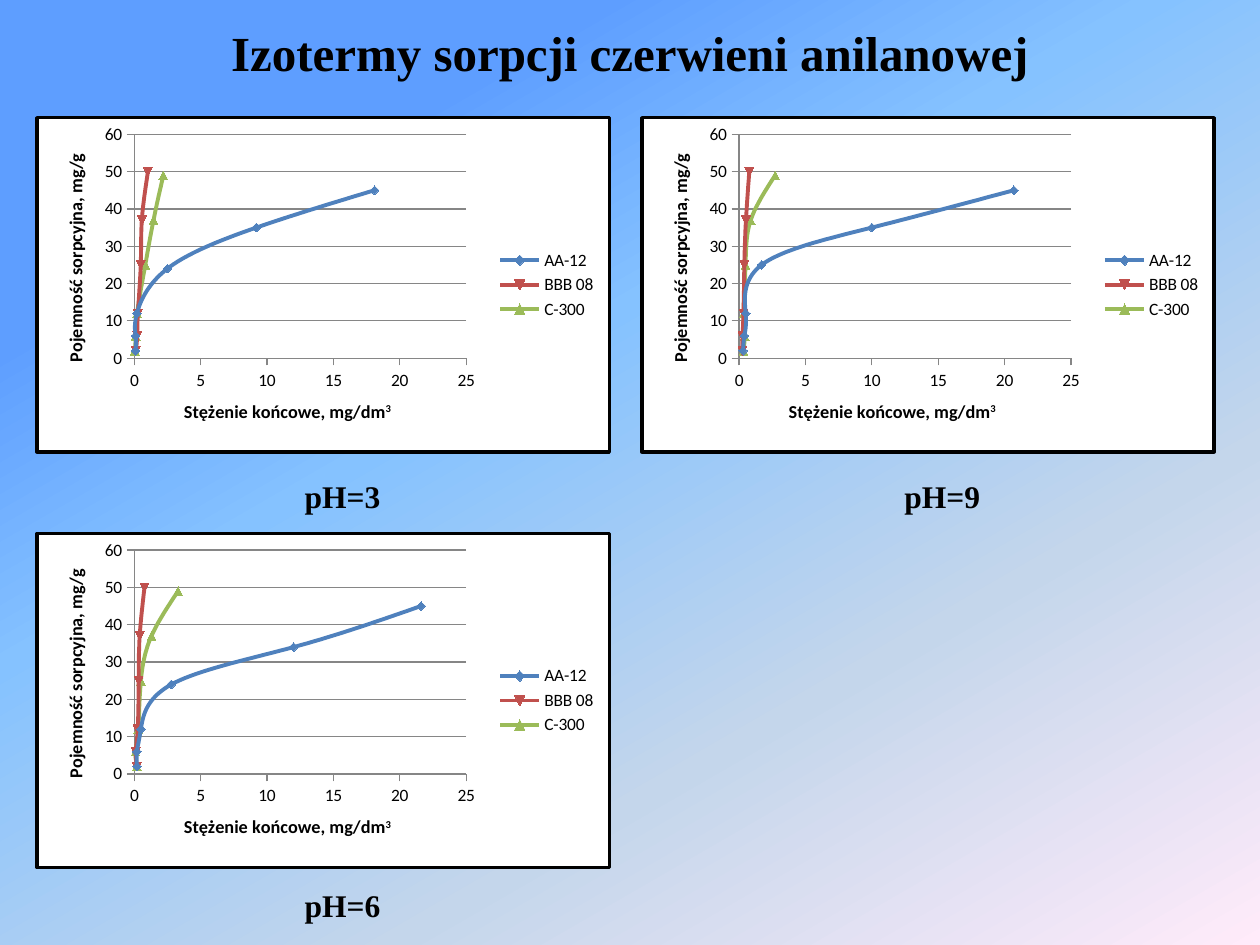
"""Build a slide of three aniline red sorption isotherm charts."""
from dataclasses import dataclass

from lxml import etree
from pptx import Presentation
from pptx import util as u
from pptx.chart.data import XyChartData
from pptx.dml.color import RGBColor
from pptx.enum import chart as charts, text
from pptx.oxml import parse_xml
from pptx.oxml.ns import nsdecls, qn


@dataclass(frozen=True)
class Theme:
    """Colours, fonts and type sizes."""
    ink: str = "000000"
    paper: str = "FFFFFF"
    rule: str = "868686"
    series: tuple = ("4F81BD", "C0504D", "9BBB59")
    backdrop: tuple = ((21, "5E9EFF"), (40, "85C2FF"), (70, "C4D6EB"), (100, "FFEBFA"))
    backdrop_angle: int = 60
    text_font: str = "Times New Roman"
    chart_font: str = "Calibri"
    title_size: float = 28
    label_size: float = 18
    axis_title_size: float = 10.5
    chart_size: float = 10
    frame_width: float = 2
    curve_width: float = 2.25
    marker_size: int = 5


class Board:
    """Hold the theme and the current slide on a grid of 100 columns and 75 rows."""

    def __init__(self, deck, theme):
        """Add a title-only page to the deck."""
        self.theme = theme
        self.column = deck.slide_width / 100
        self.row = deck.slide_height / 75
        self.page = deck.slides.add_slide(deck.slide_layouts[5])

    def area(self, left, top, width, height):
        """Turn columns and rows into slide lengths."""
        return (u.Emu(round(left * self.column)), u.Emu(round(top * self.row)),
                u.Emu(round(width * self.column)), u.Emu(round(height * self.row)))

    def style(self, font, name, size, bold=False):
        """Apply the ink colour and the given type."""
        font.name, font.size, font.bold = name, u.Pt(size), bold
        font.color.rgb = RGBColor.from_string(self.theme.ink)

    def line(self, line_format, color, width):
        """Set a solid line."""
        line_format.color.rgb = RGBColor.from_string(color)
        line_format.width = u.Pt(width)

    def backdrop(self):
        """Fill the page background with the theme gradient."""
        fill = self.page.background.fill
        fill.gradient()
        fill.gradient_angle = 360 - self.theme.backdrop_angle
        stops = next(self.page.element.iter(qn("a:gsLst")))
        for stop in list(stops):
            stops.remove(stop)
        for share, color in self.theme.backdrop:
            stop = etree.SubElement(stops, qn("a:gs"), pos=str(share * 1000))
            etree.SubElement(stop, qn("a:srgbClr"), val=color)

    def title(self, words, *place):
        """Move and fill the title placeholder."""
        box = self.page.shapes.title
        box.left, box.top, box.width, box.height = self.area(*place)
        frame = box.text_frame
        frame.text = words
        frame.vertical_anchor = text.MSO_ANCHOR.TOP
        para = frame.paragraphs[0]
        para.alignment = text.PP_ALIGN.CENTER
        para.space_before = u.Pt(self.theme.title_size * 0.2)
        self.style(para.runs[0].font, self.theme.text_font, self.theme.title_size, True)

    def label(self, words, *place):
        """Add a one-line caption."""
        frame = self.page.shapes.add_textbox(*self.area(*place)).text_frame
        frame.word_wrap = False
        frame.auto_size = text.MSO_AUTO_SIZE.SHAPE_TO_FIT_TEXT
        frame.text = words
        span = frame.paragraphs[0].runs[0]
        self.style(span.font, self.theme.text_font, self.theme.label_size, True)

    def layout(self, **shares):
        """Make a manual chart layout from shares of the chart."""
        element = parse_xml(f"<c:layout {nsdecls('c')}><c:manualLayout/></c:layout>")
        manual = element[0]
        if "w" in shares:
            etree.SubElement(manual, qn("c:layoutTarget"), val="inner")
        for side in "xy":
            etree.SubElement(manual, qn(f"c:{side}Mode"), val="edge")
        for side, share in shares.items():
            etree.SubElement(manual, qn(f"c:{side}"), val=str(share))
        return element

    def axis(self, axis, words, maximum, step, left, top, raised=""):
        """Scale and style an axis and place its title."""
        axis.minimum_scale, axis.maximum_scale, axis.major_unit = 0, maximum, step
        axis.major_tick_mark = charts.XL_TICK_MARK.OUTSIDE
        axis.tick_labels.number_format = "0"
        axis.tick_labels.number_format_is_linked = False
        self.line(axis.format.line, self.theme.rule, 0.75)
        title = axis.axis_title
        para = title.text_frame.paragraphs[0]
        for piece in filter(None, (words, raised)):
            span = para.add_run()
            span.text = piece
            self.style(span.font, self.theme.chart_font, self.theme.axis_title_size, True)
        if raised:
            list(title.element.iter(qn("a:rPr")))[-1].set("baseline", "30000")
        for old in title.element.findall(qn("c:layout")):
            title.element.remove(old)
        title.element.find(qn("c:tx")).addnext(self.layout(x=left, y=top))

    def frame(self, chart):
        """Give the chart a filled and outlined frame."""
        theme = self.theme
        chart.element.find(qn("c:chart")).addnext(parse_xml(
            f"<c:spPr {nsdecls('c', 'a')}>"
            f'<a:solidFill><a:srgbClr val="{theme.paper}"/></a:solidFill>'
            f'<a:ln w="{u.Pt(theme.frame_width)}"><a:solidFill>'
            f'<a:srgbClr val="{theme.ink}"/></a:solidFill></a:ln></c:spPr>'))

    def isotherms(self, curves, *place):
        """Add a smooth scatter chart of sorption isotherms."""
        theme = self.theme
        data = XyChartData()
        for name, (concentrations, capacities) in curves.items():
            series = data.add_series(name)
            for point in zip(concentrations, capacities):
                series.add_data_point(*point)
        chart = self.page.shapes.add_chart(
            charts.XL_CHART_TYPE.XY_SCATTER_SMOOTH, *self.area(*place), data).chart
        self.style(chart.font, theme.chart_font, theme.chart_size)
        chart.has_title = False
        chart.has_legend = True
        chart.legend.position = charts.XL_LEGEND_POSITION.RIGHT
        chart.legend.include_in_layout = False
        self.axis(chart.category_axis, "Stężenie końcowe, mg/dm", 25, 5, 0.25, 0.83, "3")
        self.axis(chart.value_axis, "Pojemność sorpcyjna, mg/g", 60, 10, 0.04, 0.1)
        chart.category_axis.has_major_gridlines = False
        chart.value_axis.has_major_gridlines = True
        self.line(chart.value_axis.major_gridlines.format.line, theme.rule, 0.75)
        plot = chart.plots[0]
        plot.vary_by_categories = False
        for series, color in zip(plot.series, theme.series):
            self.line(series.format.line, color, theme.curve_width)
            series.marker.style = charts.XL_MARKER_STYLE.AUTOMATIC
            series.marker.size = theme.marker_size
            series.marker.format.fill.solid()
            series.marker.format.fill.fore_color.rgb = RGBColor.from_string(color)
            self.line(series.marker.format.line, color, 0.75)
        for number, series in enumerate(chart.element.iter(qn("c:ser")), 1):
            series.find(qn("c:idx")).set("val", str(number))
            series.find(qn("c:smooth")).set("val", "1")
        area = next(chart.element.iter(qn("c:plotArea")))
        for old in area.findall(qn("c:layout")):
            area.remove(old)
        area.insert(0, self.layout(x=0.17, y=0.05, w=0.58, h=0.67))
        self.frame(chart)


SORBENTS = ("AA-12", "BBB 08", "C-300")
LOW_CAPACITY = (2, 6, 12, 24, 35, 45)
B_CAPACITY = (2, 6, 12, 25, 37, 50)
C_CAPACITY = (2, 6, 12, 25, 37, 49)
PANELS = (
    ("pH=3", 2.8, 9.2, 23.2, 37.4, (
        ((0.1, 0.1, 0.2, 2.5, 9.2, 18.1), LOW_CAPACITY),
        ((0.12, 0.22, 0.27, 0.49, 0.57, 1.03), B_CAPACITY),
        ((0.04, 0.11, 0.21, 0.83, 1.45, 2.19), C_CAPACITY))),
    ("pH=6", 2.8, 42.2, 23.2, 69.8, (
        ((0.2, 0.2, 0.5, 2.8, 12, 21.6), (2, 6, 12, 24, 34, 45)),
        ((0.19, 0.11, 0.26, 0.33, 0.41, 0.77), B_CAPACITY),
        ((0.2, 0.1, 0.3, 0.5, 1.3, 3.3), C_CAPACITY))),
    ("pH=9", 50.8, 9.2, 70.8, 37.4, (
        ((0.3, 0.4, 0.5, 1.7, 10, 20.7), (2, 6, 12, 25, 35, 45)),
        ((0.25, 0.26, 0.33, 0.4, 0.52, 0.77), B_CAPACITY),
        ((0.33, 0.42, 0.34, 0.49, 0.88, 2.72), C_CAPACITY))),
)


def main():
    """Build and save the deck."""
    deck = Presentation()
    deck.slide_width, deck.slide_height = u.Inches(10), u.Inches(7.5)
    board = Board(deck, Theme())
    board.backdrop()
    board.title("Izotermy sorpcji czerwieni anilanowej", 5, 1.3, 90, 7.9)
    for acidity, left, top, label_left, label_top, curves in PANELS:
        board.isotherms(dict(zip(SORBENTS, curves)), left, top, 45.7, 26.8)
        board.label(acidity, label_left, label_top, 8.7, 4)
    deck.save("out.pptx")


if __name__ == "__main__":
    main()
